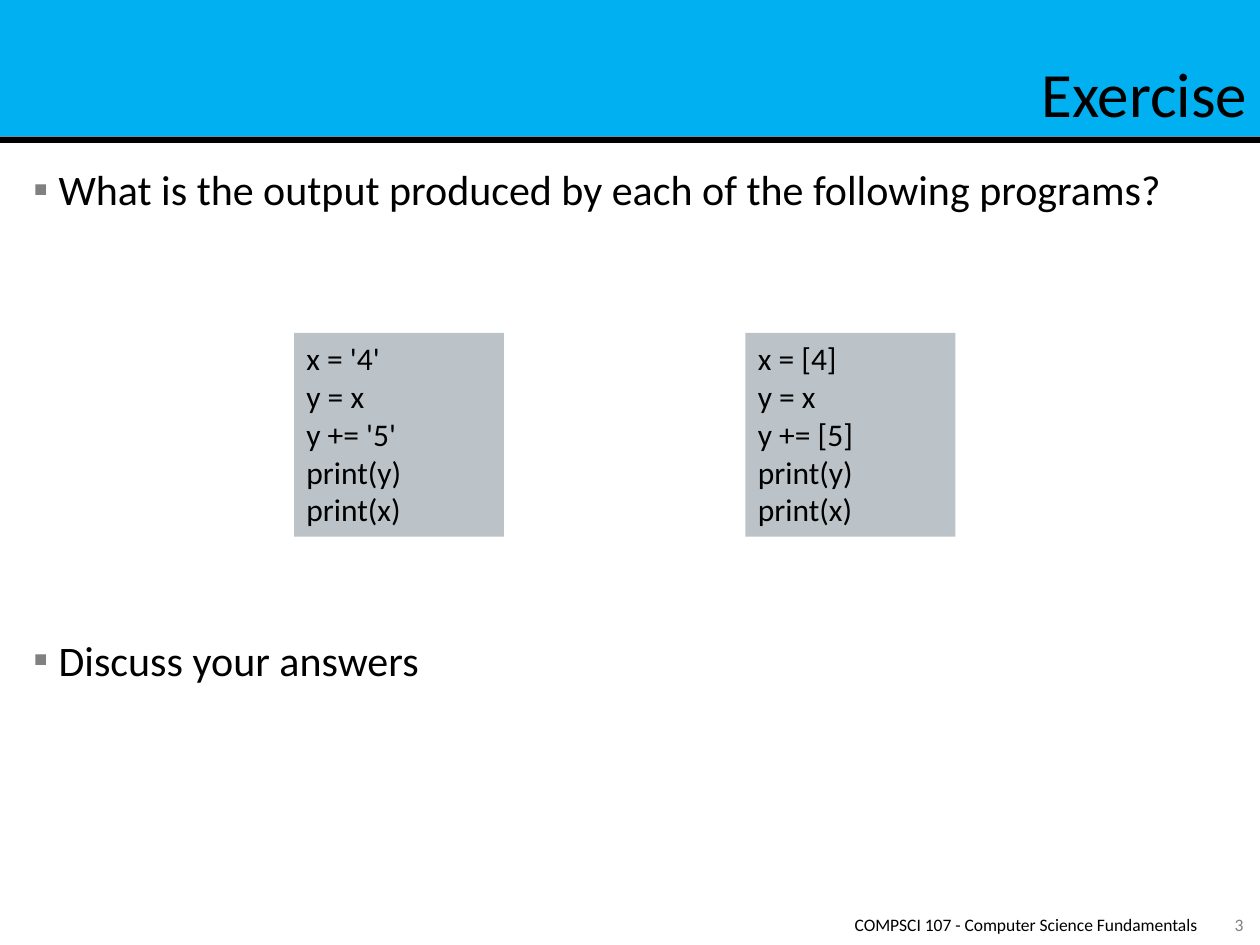
from dataclasses import dataclass

from lxml.etree import SubElement
from pptx import Presentation
from pptx.dml.color import RGBColor
from pptx.enum.shapes import MSO_SHAPE as Shape
from pptx.enum.text import MSO_ANCHOR as Anchor, PP_ALIGN as Align
from pptx.oxml.ns import qn
from pptx.util import Pt


@dataclass(frozen=True)
class Theme:
    font: str = "Calibri"
    text: RGBColor = RGBColor(0x00, 0x00, 0x00)
    muted: RGBColor = RGBColor(0x80, 0x80, 0x80)
    band: RGBColor = RGBColor(0x00, 0xB0, 0xF0)
    code_fill: RGBColor = RGBColor(0xBB, 0xC3, 0xC9)
    title_size: int = 36
    body_size: int = 24
    code_size: int = 18
    footer_size: int = 10


THEME = Theme()


def place(shape, box):
    shape.left, shape.top, shape.width, shape.height = map(Pt, box)


def set_fill(shape, color):
    shape.fill.solid()
    shape.fill.fore_color.rgb = color


def add_rectangle(slide, box, color):
    shape = slide.shapes.add_shape(Shape.RECTANGLE, *map(Pt, box))
    shape.shadow.inherit = False
    set_fill(shape, color)
    shape.line.fill.background()
    return shape


def add_text_box(slide, box):
    frame = slide.shapes.add_textbox(*map(Pt, box)).text_frame
    frame.word_wrap = True
    return frame


def write_lines(frame, lines, size, color=THEME.text, align=Align.LEFT):
    """Fill the frame with one paragraph for each line."""
    for index, line in enumerate(lines):
        paragraph = frame.add_paragraph() if index else frame.paragraphs[0]
        paragraph.alignment = align
        run = paragraph.add_run()
        run.text = line
        run.font.name = THEME.font
        run.font.size = Pt(size)
        run.font.color.rgb = color


def add_bullet(paragraph, indent):
    properties = paragraph._p.get_or_add_pPr()
    properties.set("marL", str(Pt(indent)))
    properties.set("indent", str(Pt(-indent)))
    color = SubElement(properties, qn("a:buClr"))
    SubElement(color, qn("a:srgbClr"), val=str(THEME.muted))
    SubElement(properties, qn("a:buFont"), typeface=THEME.font)
    SubElement(properties, qn("a:buChar"), char="▪")


def add_header(slide, box, title, rule_height):
    left, top, width, height = box
    shape = slide.shapes.title
    place(shape, box)
    set_fill(shape, THEME.band)
    shape.text_frame.vertical_anchor = Anchor.BOTTOM
    write_lines(shape.text_frame, [title], THEME.title_size, align=Align.RIGHT)
    add_rectangle(slide, (left, top + height, width, rule_height), THEME.text)


def add_bullets(slide, box, lines, gap):
    frame = add_text_box(slide, box)
    write_lines(frame, lines, THEME.body_size)
    for index, paragraph in enumerate(frame.paragraphs):
        add_bullet(paragraph, indent=14.4)
        if index:
            paragraph.space_before = Pt(gap)


def add_programs(slide, box, programs, panel_width):
    """Spread the code panels evenly from the left to the right edge of the box."""
    left, top, width, height = box
    step = (width - panel_width) / (len(programs) - 1)
    for index, program in enumerate(programs):
        panel = add_rectangle(
            slide, (left + index * step, top, panel_width, height), THEME.code_fill)
        panel.text_frame.vertical_anchor = Anchor.TOP
        write_lines(panel.text_frame, program.splitlines(), THEME.code_size)


def add_footer(slide, box, course, number, number_width):
    left, top, width, height = box
    course_width = width - number_width - 6
    parts = [
        (course, left, course_width, THEME.text, Align.RIGHT),
        (number, left + width - number_width, number_width, THEME.muted, Align.CENTER),
    ]
    for text, part_left, part_width, color, align in parts:
        frame = add_text_box(slide, (part_left, top, part_width, height))
        frame.margin_left = frame.margin_right = 0
        frame.margin_top = frame.margin_bottom = 0
        frame.vertical_anchor = Anchor.MIDDLE
        write_lines(frame, [text], THEME.footer_size, color, align)


def main():
    presentation = Presentation()
    presentation.slide_width, presentation.slide_height = Pt(720), Pt(540)
    slide = presentation.slides.add_slide(presentation.slide_layouts[5])
    add_header(slide, (0, 0, 720, 78), "Exercise", rule_height=3.6)
    add_bullets(
        slide, (12, 90, 696, 426),
        ["What is the output produced by each of the following programs?",
         "Discuss your answers"],
        gap=240)
    add_programs(
        slide, (168, 190.3, 378, 116.4),
        ["x = '4'\ny = x\ny += '5'\nprint(y)\nprint(x)",
         "x = [4]\ny = x\ny += [5]\nprint(y)\nprint(x)"],
        panel_width=120)
    add_footer(
        slide, (348, 522, 378, 12),
        "COMPSCI 107 - Computer Science Fundamentals", "3", number_width=36)
    presentation.save("out.pptx")


if __name__ == "__main__":
    main()
